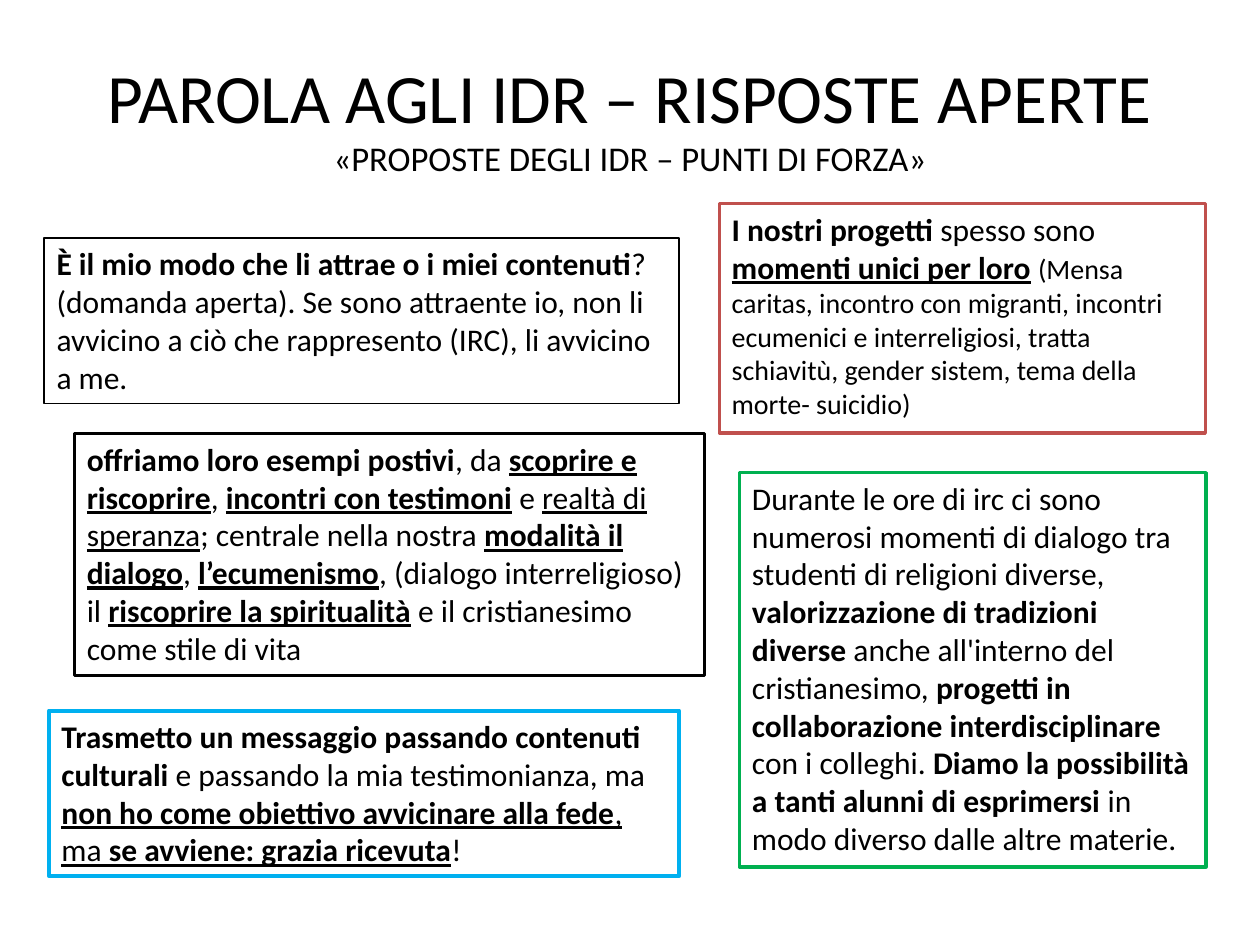
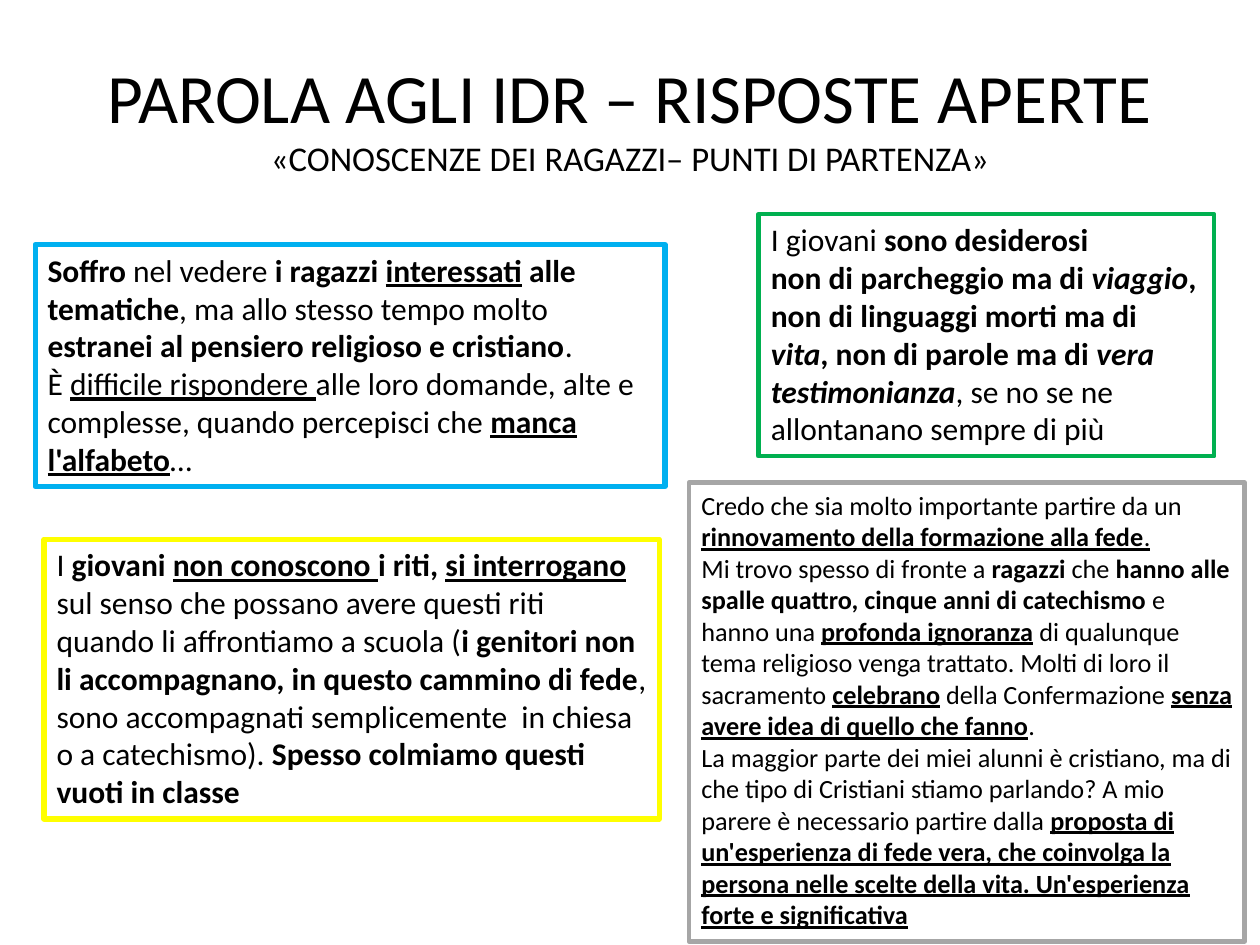
import pptx
import pptx.dml.color
import pptx.enum.text
import pptx.oxml.ns
import pptx.util
from lxml import etree
from pptx.util import Cm

FONT = "Calibri"
BLACK, RED, GREEN = "000000", "C0504D", "00B050"
BLUE, YELLOW, GREY = "00B0F0", "FFFF00", "A6A6A6"
TITLE = "PAROLA AGLI IDR – RISPOSTE APERTE"
TITLE_SIZES = (39.6, 19.8)
ANSWER_SIZE = 18

# Each answer: left, top, width, height (cm), border colour, border width (pt),
# text size (pt), paragraphs. A paragraph is a list of (text, style) pairs, with
# b = bold, u = underlined, i = italic, and optionally a text size of its own.
STRENGTHS = [
    (0.89, 4.8, 12.8, 3.33, BLACK, 0.75, ANSWER_SIZE, [[
        ("È il mio modo che li attrae o i miei contenuti", "b"),
        ("? (domanda aperta). Se sono attraente io, non li avvicino a ciò che "
         "rappresento (IRC), li avvicino a me.", ""),
    ]]),
    (14.5, 4.11, 9.8, 4.62, RED, 1.75, ANSWER_SIZE, [[
        ("I nostri progetti", "b"),
        (" spesso sono ", ""),
        ("momenti unici per loro", "bu"),
        (" ", ""),
        ("(Mensa caritas, incontro con migranti, incontri ecumenici e "
         "interreligiosi, tratta schiavitù, gender sistem, tema della morte- "
         "suicidio)", "", 16),
    ]]),
    (1.5, 8.74, 12.7, 4.88, BLACK, 1.5, ANSWER_SIZE, [[
        ("offriamo loro esempi postivi", "b"),
        (", da ", ""),
        ("scoprire e riscoprire", "bu"),
        (", ", ""),
        ("incontri con testimoni", "bu"),
        (" e ", ""),
        ("realtà di speranza", "u"),
        ("; centrale nella nostra ", ""),
        ("modalità il dialogo", "bu"),
        (", ", ""),
        ("l’ecumenismo", "bu"),
        (", (dialogo interreligioso) il ", ""),
        ("riscoprire la spiritualità", "bu"),
        (" e il cristianesimo come stile di vita", ""),
    ]]),
    (14.91, 9.53, 9.4, 7.95, GREEN, 2, ANSWER_SIZE, [[
        ("Durante le ore di irc ci sono numerosi momenti di dialogo tra "
         "studenti di religioni diverse, ", ""),
        ("valorizzazione di tradizioni diverse", "b"),
        (" anche all'interno del cristianesimo, ", ""),
        ("progetti in collaborazione interdisciplinare", "b"),
        (" con i colleghi. ", ""),
        ("Diamo la possibilità a tanti alunni di esprimersi", "b"),
        (" in modo diverso dalle altre materie.", ""),
    ]]),
    (0.99, 14.33, 12.7, 3.33, BLUE, 2.5, ANSWER_SIZE, [[
        ("Trasmetto un messaggio passando contenuti culturali", "b"),
        (" e passando la mia testimonianza, ma ", ""),
        ("non ho come obiettivo avvicinare alla fede", "bu"),
        (", ma ", "u"),
        ("se avviene: grazia ricevuta", "bu"),
        ("!", ""),
    ]]),
]

STARTING_POINTS = [
    (0.71, 4.93, 12.7, 4.88, BLUE, 3, ANSWER_SIZE, [[
        ("Soffro", "b"),
        (" nel vedere ", ""),
        ("i ragazzi ", "b"),
        ("interessati", "bu"),
        (" alle tematiche", "b"),
        (", ma allo stesso tempo molto ", ""),
        ("estranei al pensiero religioso e cristiano", "b"),
        (".", ""),
    ], [
        ("È ", ""),
        ("difficile rispondere ", "u"),
        ("alle loro domande, alte e complesse, quando percepisci che ", ""),
        ("manca l'alfabeto", "bu"),
        ("…", ""),
    ]]),
    (15.29, 4.32, 9.19, 4.88, GREEN, 2.5, ANSWER_SIZE, [[
        ("I giovani ", ""),
        ("sono desiderosi", "b"),
    ], [
        ("non di parcheggio ma di ", "b"),
        ("viaggio", "bi"),
        (", non di linguaggi morti ma di ", "b"),
        ("vita", "bi"),
        (", non di parole ma di ", "b"),
        ("vera testimonianza", "bi"),
        (", se no se ne allontanano sempre di più", ""),
    ]]),
    (0.89, 10.87, 12.4, 5.64, YELLOW, 3, ANSWER_SIZE, [[
        ("I ", ""),
        ("giovani ", "b"),
        ("non conoscono ", "bu"),
        ("i riti, ", "b"),
        ("si interrogano ", "bu"),
        ("sul senso che possano avere questi riti quando li affrontiamo a "
         "scuola (", ""),
        ("i genitori non li accompagnano, in questo cammino di fede", "b"),
        (", sono accompagnati semplicemente  in chiesa o a catechismo). ", ""),
        ("Spesso colmiamo questi vuoti in classe", "b"),
    ]]),
    (13.89, 9.73, 11.2, 9.25, GREY, 2.5, 15, [[
        ("Credo che sia molto importante partire da un ", ""),
        ("rinnovamento della formazione alla fede", "bu"),
        (".", "u"),
    ], [
        ("Mi trovo spesso di fronte a ", ""),
        ("ragazzi ", "b"),
        ("che ", ""),
        ("hanno alle spalle quattro, cinque anni di catechismo", "b"),
        (" e hanno una ", ""),
        ("profonda ignoranza", "bu"),
        (" di qualunque tema religioso venga trattato. Molti di loro il "
         "sacramento ", ""),
        ("celebrano", "bu"),
        (" della Confermazione ", ""),
        ("senza avere idea di quello che fanno", "bu"),
        (".", ""),
    ], [
        ("La maggior parte dei miei alunni è cristiano, ma di che tipo di "
         "Cristiani stiamo parlando? A mio parere è necessario partire dalla ", ""),
        ("proposta di un'esperienza di fede vera, che coinvolga la persona "
         "nelle scelte della vita. Un'esperienza forte e significativa", "bu"),
    ]]),
]


def color(hex_code):
    return pptx.dml.color.RGBColor.from_string(hex_code)


def format_run(run, size, style=""):
    font = run.font
    font.name = FONT
    font.size = pptx.util.Pt(size)
    font.color.rgb = color(BLACK)
    font.bold = "b" in style
    font.italic = "i" in style
    font.underline = "u" in style


def add_title(slide, subtitle):
    title = slide.shapes.title
    title.left, title.top = Cm(1.27), Cm(0.76)
    title.width, title.height = Cm(22.86), Cm(3.18)
    frame = title.text_frame
    frame.text = f"{TITLE}\v{subtitle}"
    frame.auto_size = pptx.enum.text.MSO_AUTO_SIZE.NONE
    frame.vertical_anchor = pptx.enum.text.MSO_ANCHOR.MIDDLE
    heading = frame.paragraphs[0]
    heading.alignment = pptx.enum.text.PP_ALIGN.CENTER
    for run, size in zip(heading.runs, TITLE_SIZES):
        format_run(run, size)
    # The line break takes the size of the first line
    line_break = heading._p.find(pptx.oxml.ns.qn("a:br"))
    etree.SubElement(line_break, pptx.oxml.ns.qn("a:rPr"),
                     sz=str(round(TITLE_SIZES[0] * 100)))


def add_answer(slide, left, top, width, height, border, border_width, size, paragraphs):
    answer = slide.shapes.add_textbox(Cm(left), Cm(top), Cm(width), Cm(height))
    answer.line.color.rgb = color(border)
    answer.line.width = pptx.util.Pt(border_width)
    frame = answer.text_frame
    frame.word_wrap = True
    frame.auto_size = pptx.enum.text.MSO_AUTO_SIZE.SHAPE_TO_FIT_TEXT
    for index, pieces in enumerate(paragraphs):
        paragraph = frame.add_paragraph() if index else frame.paragraphs[0]
        for text, style, *own_size in pieces:
            run = paragraph.add_run()
            run.text = text
            format_run(run, own_size[0] if own_size else size, style)


def add_answers_slide(presentation, subtitle, answers):
    title_only = presentation.slide_layouts[5]
    slide = presentation.slides.add_slide(title_only)
    add_title(slide, subtitle)
    for answer in answers:
        add_answer(slide, *answer)


def main():
    presentation = pptx.Presentation()
    presentation.slide_width, presentation.slide_height = Cm(25.4), Cm(19.05)
    add_answers_slide(presentation, "«PROPOSTE DEGLI IDR – PUNTI DI FORZA»", STRENGTHS)
    add_answers_slide(presentation, "«CONOSCENZE DEI RAGAZZI– PUNTI DI PARTENZA»",
                      STARTING_POINTS)
    presentation.save("out.pptx")


if __name__ == "__main__":
    main()
